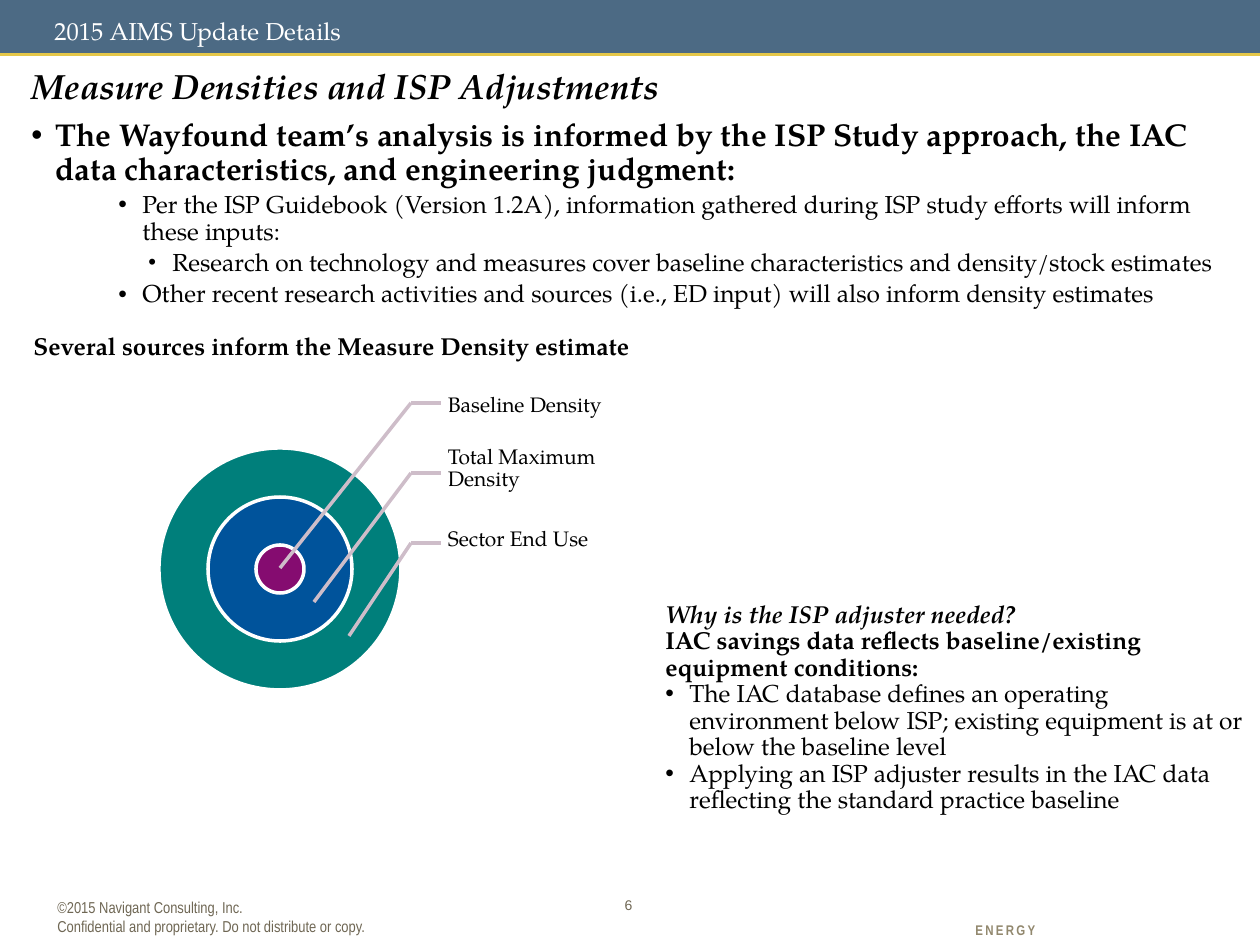
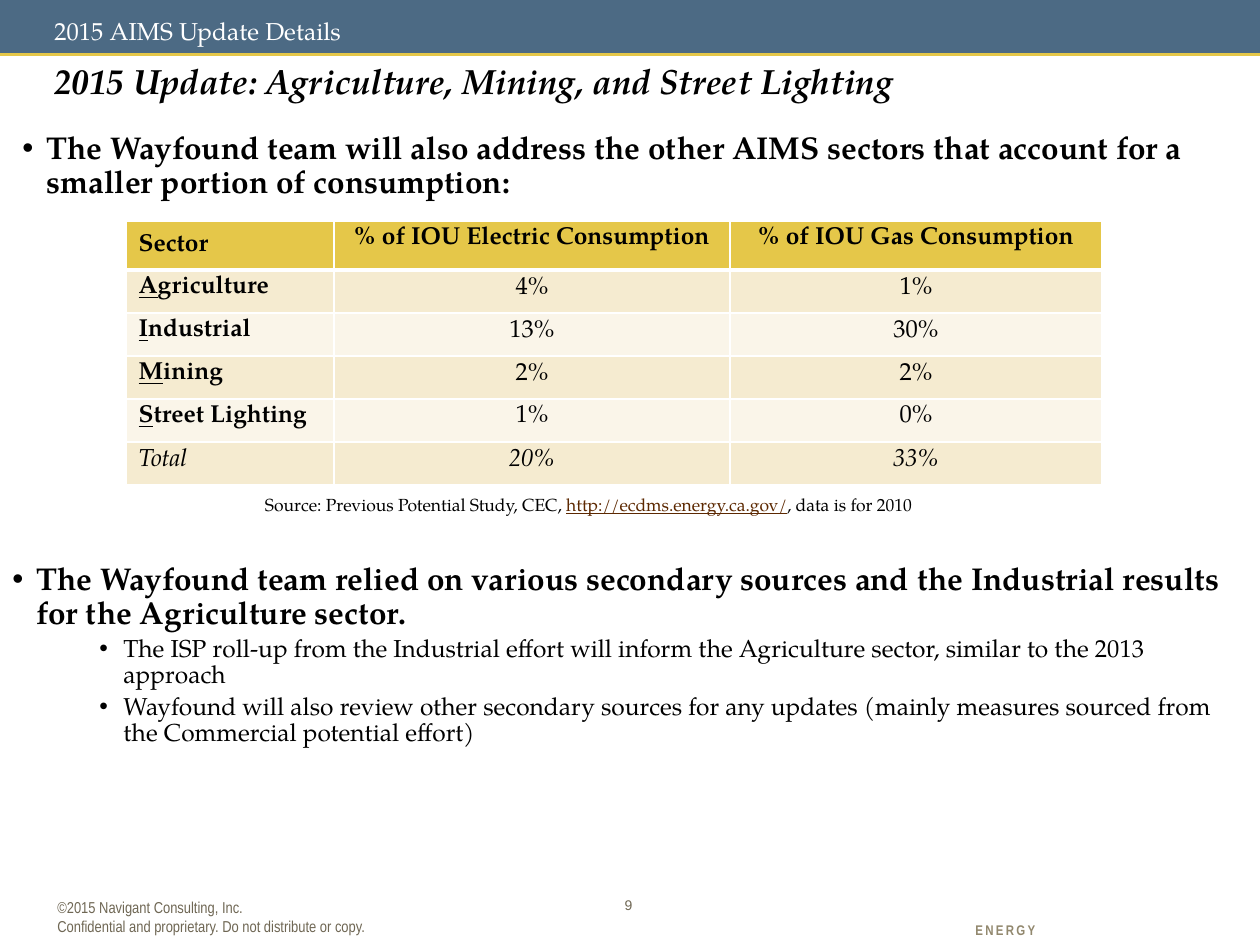
from dataclasses import dataclass

from lxml import etree
from pptx import Presentation
from pptx.dml.color import RGBColor
from pptx.enum.shapes import MSO_CONNECTOR, MSO_SHAPE
from pptx.enum.text import MSO_ANCHOR, PP_ALIGN
from pptx.oxml.ns import qn
from pptx.util import Emu, Pt

STRAIGHT = MSO_CONNECTOR.STRAIGHT
RECTANGLE, OVAL = MSO_SHAPE.RECTANGLE, MSO_SHAPE.OVAL
TOP, MIDDLE = MSO_ANCHOR.TOP, MSO_ANCHOR.MIDDLE
LEFT, CENTER = PP_ALIGN.LEFT, PP_ALIGN.CENTER

BLACK = RGBColor(0x00, 0x00, 0x00)
WHITE = RGBColor(0xFF, 0xFF, 0xFF)
SLATE = RGBColor(0x4C, 0x6A, 0x84)
GOLD = RGBColor(0xE5, 0xC7, 0x49)
SAND = RGBColor(0xF5, 0xEB, 0xD0)
CREAM = RGBColor(0xFA, 0xF5, 0xE9)
FOOTER_BROWN = RGBColor(0x6F, 0x67, 0x54)
TAG_BROWN = RGBColor(0x92, 0x88, 0x6E)
LINK_BROWN = RGBColor(0x5C, 0x28, 0x01)
TEAL = RGBColor(0x00, 0x7F, 0x7B)
BLUE = RGBColor(0x00, 0x53, 0x9B)
PLUM = RGBColor(0x85, 0x0C, 0x70)
MAUVE = RGBColor(0xCE, 0xBD, 0xC9)

SERIF, SANS, NARROW = "TeX Gyre Pagella", "Arial", "Arial Narrow"
PX_PER_INCH = 126
PAGE_WIDTH, PAGE_HEIGHT = 1260, 945
BAND_HEIGHT = 53
HANG = 24


@dataclass(frozen=True)
class Box:
    left: int
    top: int
    width: int
    height: int


@dataclass(frozen=True)
class Item:
    text: str
    size: float = 14
    bold: bool = False
    italic: bool = False
    left: int = 0
    level: int = 0
    bullet: bool = False
    bullet_percent: int = 100
    before: float = 0
    spacing: float = 0.9
    font: str = SERIF
    color: RGBColor = BLACK
    align: PP_ALIGN = LEFT
    tracking: int = 0


@dataclass(frozen=True)
class Callout:
    label: str
    label_top: int
    elbow_y: int
    tip_x: int
    tip_y: int


@dataclass(frozen=True)
class Ring:
    radius: int
    color: RGBColor


@dataclass(frozen=True)
class SectorRow:
    sector: str
    electric: str
    gas: str


RINGS = [Ring(121, TEAL), Ring(72, BLUE), Ring(24, PLUM)]
RING_CENTER_X, RING_CENTER_Y = 280, 569
CALLOUTS = [
    Callout("Baseline Density", 370, 403, 280, 568),
    Callout("Total Maximum Density", 433, 473, 314, 602),
    Callout("Sector End Use", 504, 543, 349, 636),
]
SECTORS = [
    SectorRow("Agriculture", "4%", "1%"),
    SectorRow("Industrial", "13%", "30%"),
    SectorRow("Mining", "2%", "2%"),
    SectorRow("Street Lighting", "1%", "0%"),
    SectorRow("Total", "20%", "33%"),
]
COLUMN_WIDTHS = [208, 396, 372]
HEADER_HEIGHT, ROW_HEIGHT = 49, 43


def px(length: float) -> Emu:
    return Emu(round(length * 914400 / PX_PER_INCH))


def place(box: Box) -> tuple[Emu, Emu, Emu, Emu]:
    return px(box.left), px(box.top), px(box.width), px(box.height)


def write(para, text: str, *, size: float = 14, font: str = SERIF, color: RGBColor = BLACK,
          bold: bool = False, italic: bool = False, underline: bool = False,
          tracking: int = 0) -> None:
    span = para.add_run()
    span.text = text
    span.font.size = Pt(size)
    span.font.name = font
    span.font.color.rgb = color
    span.font.bold = bold
    span.font.italic = italic
    span.font.underline = underline
    if tracking:
        span.font._element.set("spc", str(tracking))


def set_indent(para, left: int, bullet: bool, bullet_percent: int) -> None:
    props = para._p.get_or_add_pPr()
    props.set("marL", str(px(left)))
    props.set("indent", str(px(-HANG) if bullet else 0))
    if bullet:
        etree.SubElement(props, qn("a:buSzPct"), val=str(bullet_percent * 1000))
        etree.SubElement(props, qn("a:buFont"), typeface=SANS)
        etree.SubElement(props, qn("a:buChar"), char="•")


def add_frame(page, box: Box, anchor: MSO_ANCHOR = TOP, wrap: bool = True,
              insets: tuple[int, int, int, int] | None = None):
    frame = page.shapes.add_textbox(*place(box)).text_frame
    frame.word_wrap = wrap
    frame.vertical_anchor = anchor
    if insets:
        (frame.margin_left, frame.margin_top,
         frame.margin_right, frame.margin_bottom) = map(px, insets)
    return frame


def fill_frame(frame, items: list[Item]) -> None:
    for index, item in enumerate(items):
        para = frame.add_paragraph() if index else frame.paragraphs[0]
        set_indent(para, item.left, item.bullet, item.bullet_percent)
        para.level = item.level
        para.alignment = item.align
        para.line_spacing = item.spacing
        if index and item.before:
            para.space_before = Pt(item.before)
        write(para, item.text, size=item.size, font=item.font, color=item.color,
              bold=item.bold, italic=item.italic, tracking=item.tracking)


def heading(text: str, spacing: float = 0.9) -> Item:
    return Item(text, size=20, bold=True, italic=True, spacing=spacing)


def main_point(text: str) -> Item:
    return Item(text, size=18, bold=True, left=HANG, bullet=True, before=7.2)


def sub_point(text: str) -> Item:
    return Item(text, left=111, level=1, bullet=True, before=2.8)


def detail_point(text: str) -> Item:
    return Item(text, left=141, level=2, bullet=True, bullet_percent=90, before=2.8)


def add_line(page, start: tuple[int, int], end: tuple[int, int], color: RGBColor,
             width: float) -> None:
    line = page.shapes.add_connector(STRAIGHT, *map(px, start + end))
    line.line.color.rgb = color
    line.line.width = Pt(width)
    etree.SubElement(line._element.spPr, qn("a:effectLst"))


def add_solid(page, kind: MSO_SHAPE, box: Box, color: RGBColor, outlined: bool = False) -> None:
    shape = page.shapes.add_shape(kind, *place(box))
    shape.shadow.inherit = False
    shape.fill.solid()
    shape.fill.fore_color.rgb = color
    if outlined:
        shape.line.color.rgb = WHITE
        shape.line.width = Pt(2)
    else:
        shape.line.fill.background()


def add_page(deck, number: str):
    page = deck.slides.add_slide(deck.slide_layouts[6])
    add_line(page, (PAGE_WIDTH, BAND_HEIGHT), (0, BAND_HEIGHT), GOLD, 3)
    fill_frame(add_frame(page, Box(597, 888, 63, 42), insets=(13, 13, 13, 13)),
               [Item(number, size=8, font=SANS, color=FOOTER_BROWN, align=CENTER, spacing=1)])
    fill_frame(add_frame(page, Box(45, 892, 480, 50)),
               [Item(text, size=9, font=NARROW, color=FOOTER_BROWN, spacing=1)
                for text in ("©2015 Navigant Consulting, Inc.",
                             "Confidential and proprietary. Do not distribute or copy.")])
    add_solid(page, RECTANGLE, Box(0, 0, PAGE_WIDTH, BAND_HEIGHT), SLATE)
    fill_frame(add_frame(page, Box(963, 915, 88, 30), wrap=False),
               [Item("ENERGY", size=8, bold=True, font=NARROW, color=TAG_BROWN,
                     spacing=1, tracking=130)])
    fill_frame(add_frame(page, Box(42, 10, 1172, 32)),
               [Item("2015 AIMS Update Details", color=WHITE, spacing=1)])
    return page


def add_density_target(page) -> None:
    for ring in RINGS:
        add_solid(page, OVAL, Box(RING_CENTER_X - ring.radius, RING_CENTER_Y - ring.radius,
                                  2 * ring.radius, 2 * ring.radius), ring.color, outlined=True)
    for callout in CALLOUTS:
        frame = add_frame(page, Box(437, callout.label_top, 214, 71), MIDDLE,
                          insets=(11, 3, 3, 3))
        fill_frame(frame, [Item(callout.label, size=12)])
        elbow = (411, callout.elbow_y)
        add_line(page, elbow, (441, callout.elbow_y), MAUVE, 2)
        add_line(page, elbow, (callout.tip_x, callout.tip_y), MAUVE, 2)


def style_cell(cell, color: RGBColor, bottom_width: float) -> None:
    props = cell._tc.get_or_add_tcPr()
    for side, width in (("L", 1), ("R", 1), ("T", 1), ("B", bottom_width)):
        border = etree.SubElement(props, qn(f"a:ln{side}"), w=str(Pt(width)))
        solid = etree.SubElement(border, qn("a:solidFill"))
        etree.SubElement(solid, qn("a:srgbClr"), val=str(WHITE))
    cell.fill.solid()
    cell.fill.fore_color.rgb = color


def add_sector_table(page) -> None:
    height = HEADER_HEIGHT + ROW_HEIGHT * len(SECTORS)
    box = Box(126, 221, sum(COLUMN_WIDTHS), height)
    table = page.shapes.add_table(len(SECTORS) + 1, len(COLUMN_WIDTHS), *place(box)).table
    table.first_row = table.horz_banding = False
    for column, width in zip(table.columns, COLUMN_WIDTHS):
        column.width = px(width)
    header = SectorRow("Sector", "% of IOU Electric Consumption", "% of IOU Gas Consumption")
    for row_index, sector in enumerate([header, *SECTORS]):
        is_header = row_index == 0
        is_total = row_index == len(SECTORS)
        table.rows[row_index].height = px(HEADER_HEIGHT if is_header else ROW_HEIGHT)
        color = GOLD if is_header else SAND if row_index % 2 else CREAM
        for column_index, text in enumerate((sector.sector, sector.electric, sector.gas)):
            cell = table.cell(row_index, column_index)
            style_cell(cell, color, 3 if is_header else 1)
            para = cell.text_frame.paragraphs[0]
            para.alignment = CENTER if column_index else LEFT
            if column_index or is_header or is_total:
                write(para, text, bold=is_header, italic=is_total)
            else:
                write(para, text[0], bold=True, underline=True)
                write(para, text[1:], bold=True)
    table.cell(0, 0).vertical_anchor = MIDDLE


def build_density_page(deck) -> None:
    page = add_page(deck, "6")
    fill_frame(add_frame(page, Box(19, 63, 1218, 262)), [
        heading("Measure Densities and ISP Adjustments"),
        main_point("The Wayfound team’s analysis is informed by the ISP Study approach, "
                   "the IAC data characteristics, and engineering judgment:"),
        sub_point("Per the ISP Guidebook (Version 1.2A), information gathered during ISP "
                  "study efforts will inform these inputs:"),
        detail_point("Research on technology and measures cover baseline characteristics "
                     "and density/stock estimates"),
        sub_point("Other recent research activities and sources (i.e., ED input) will also "
                  "inform density estimates"),
    ])
    add_density_target(page)
    fill_frame(add_frame(page, Box(21, 325, 662, 63)),
               [Item("Several sources inform the Measure Density estimate", bold=True, spacing=1)])
    fill_frame(add_frame(page, Box(629, 596, 627, 227)), [
        Item("Why is the ISP adjuster needed?", bold=True, italic=True, left=HANG),
        Item("IAC savings data reflects baseline/existing equipment conditions:",
             bold=True, left=HANG),
        Item("The IAC database defines an operating environment below ISP; existing "
             "equipment is at or below the baseline level", left=2 * HANG, bullet=True),
        Item("Applying an ISP adjuster results in the IAC data reflecting the standard "
             "practice baseline", left=2 * HANG, bullet=True),
    ])


def build_sectors_page(deck) -> None:
    page = add_page(deck, "9")
    fill_frame(add_frame(page, Box(42, 53, 1207, 84)),
               [heading("2015 Update: Agriculture, Mining, and Street Lighting", spacing=1)])
    fill_frame(add_frame(page, Box(0, 557, 1239, 210)), [
        main_point("The Wayfound team relied on various secondary sources and the Industrial "
                   "results for the Agriculture sector."),
        sub_point("The ISP roll-up from the Industrial effort will inform the Agriculture "
                  "sector, similar to the 2013 approach"),
        sub_point("Wayfound will also review other secondary sources for any updates (mainly "
                  "measures sourced from the Commercial potential effort)"),
    ])
    add_sector_table(page)
    fill_frame(add_frame(page, Box(10, 126, 1239, 63)), [
        main_point("The Wayfound team will also address the other AIMS sectors that account "
                   "for a smaller portion of consumption:")])
    para = add_frame(page, Box(252, 483, 725, 42), insets=(13, 13, 13, 13)).paragraphs[0]
    write(para, "Source: Previous Potential Study, CEC, ", size=10)
    write(para, "http://ecdms.energy.ca.gov/", size=10, color=LINK_BROWN, underline=True)
    write(para, ", data is for 2010", size=10)


def main() -> None:
    deck = Presentation()
    deck.slide_width, deck.slide_height = px(PAGE_WIDTH), px(PAGE_HEIGHT)
    build_density_page(deck)
    build_sectors_page(deck)
    deck.save("out.pptx")


if __name__ == "__main__":
    main()
